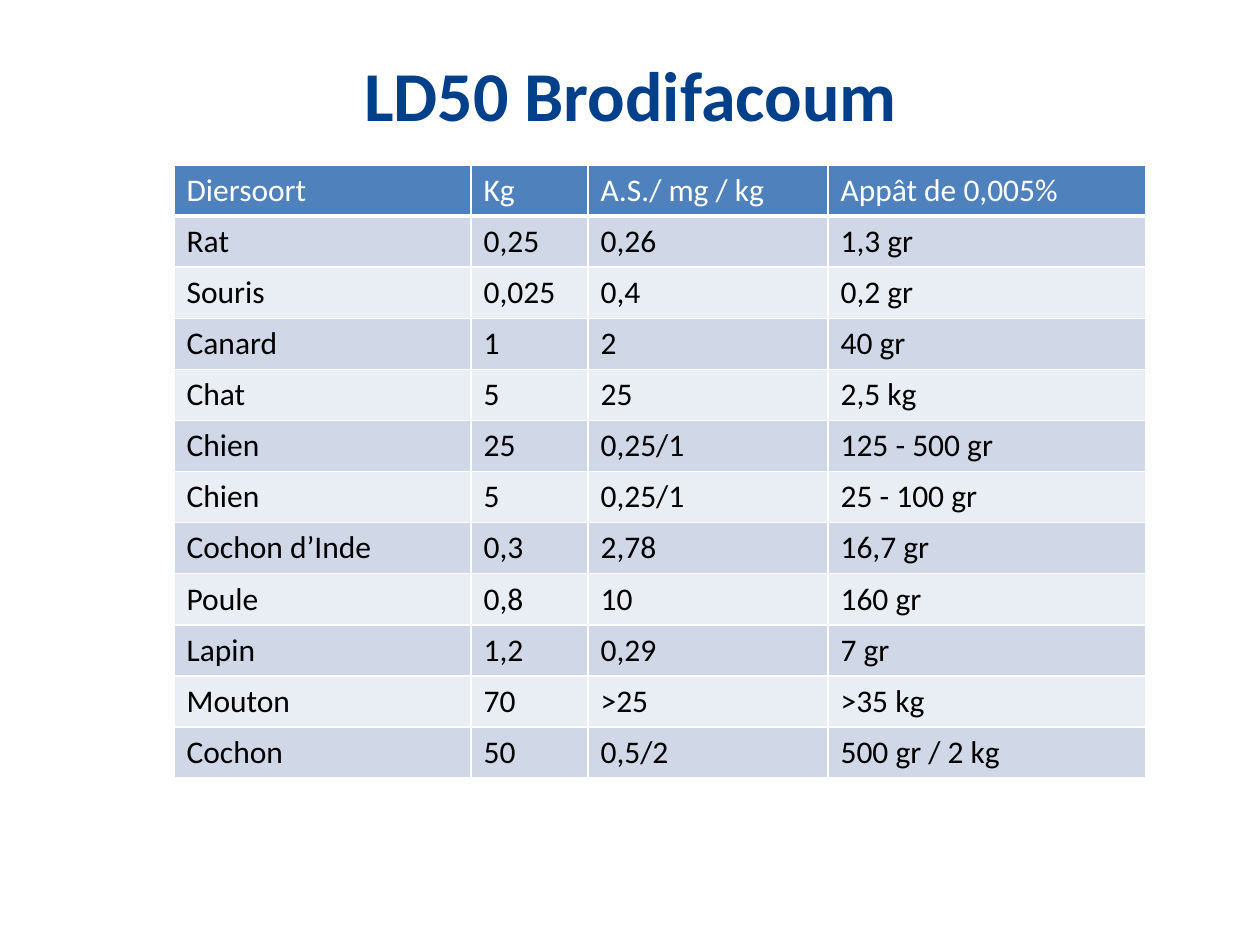
from pptx import Presentation
from pptx.dml.color import RGBColor as RGB
from pptx.enum.text import MSO_ANCHOR as ANCHOR, PP_ALIGN as ALIGN
from pptx.oxml import parse_xml
from pptx.oxml.ns import nsdecls
from pptx.util import Pt

PX = 914400 // 126
COLORS = {"title": "003F8A", "header": "4F81BD", "band": "D0D8E8",
          "plain": "E9EDF4", "white": "FFFFFF", "black": "000000"}


def write(tf, text, size=18, color="black", bold=False, align=ALIGN.LEFT):
    p = tf.paragraphs[0]
    p.alignment = align
    r = p.add_run()
    r.text = text
    r.font.name = "Calibri"
    r.font.size = Pt(size)
    r.font.bold = bold
    r.font.color.rgb = RGB.from_string(COLORS[color])


def set_borders(cell, bottom):
    tcPr = cell._tc.get_or_add_tcPr()
    widths = {"lnL": 1, "lnR": 1, "lnT": 1, "lnB": bottom}
    for i, (side, width) in enumerate(widths.items()):
        tcPr.insert(i, parse_xml(
            f'<a:{side} {nsdecls("a")} w="{Pt(width)}"><a:solidFill>'
            f'<a:srgbClr val="{COLORS["white"]}"/></a:solidFill></a:{side}>'))


prs = Presentation()
prs.slide_width, prs.slide_height = 1260 * PX, 945 * PX
s = prs.slides.add_slide(prs.slide_layouts[5])

# Title
title = s.shapes.title
title.left, title.top, title.width, title.height = (
    v * PX for v in (29, 45, 1203, 97))
tf = title.text_frame
tf.word_wrap = True
tf.vertical_anchor = ANCHOR.MIDDLE
write(tf, "LD50 Brodifacoum", size=40, color="title", bold=True,
      align=ALIGN.CENTER)

# Lethal dose table
rows = [
    ("Diersoort", "Kg", "A.S./ mg / kg", "Appât de 0,005%"),
    ("Rat", "0,25", "0,26", "1,3 gr"),
    ("Souris", "0,025", "0,4", "0,2 gr"),
    ("Canard", "1", "2", "40 gr"),
    ("Chat", "5", "25", "2,5 kg"),
    ("Chien", "25", "0,25/1", "125 - 500 gr"),
    ("Chien", "5", "0,25/1", "25 - 100 gr"),
    ("Cochon d’Inde", "0,3", "2,78", "16,7 gr"),
    ("Poule", "0,8", "10", "160 gr"),
    ("Lapin", "1,2", "0,29", "7 gr"),
    ("Mouton", "70", ">25", ">35 kg"),
    ("Cochon", "50", "0,5/2", "500 gr / 2 kg"),
]
col_widths = [297, 117, 240, 318]
table = s.shapes.add_table(len(rows), len(col_widths), 174 * PX, 165 * PX,
                           sum(col_widths) * PX, 613 * PX).table
for col, width in zip(table.columns, col_widths):
    col.width = width * PX

for i, row in enumerate(rows):
    fill = "header" if i == 0 else "band" if i % 2 else "plain"
    for j, text in enumerate(row):
        cell = table.cell(i, j)
        cell.fill.solid()
        cell.fill.fore_color.rgb = RGB.from_string(COLORS[fill])
        set_borders(cell, bottom=1 if i else 3)
        write(cell.text_frame, text, color="black" if i else "white")

prs.save("out.pptx")
